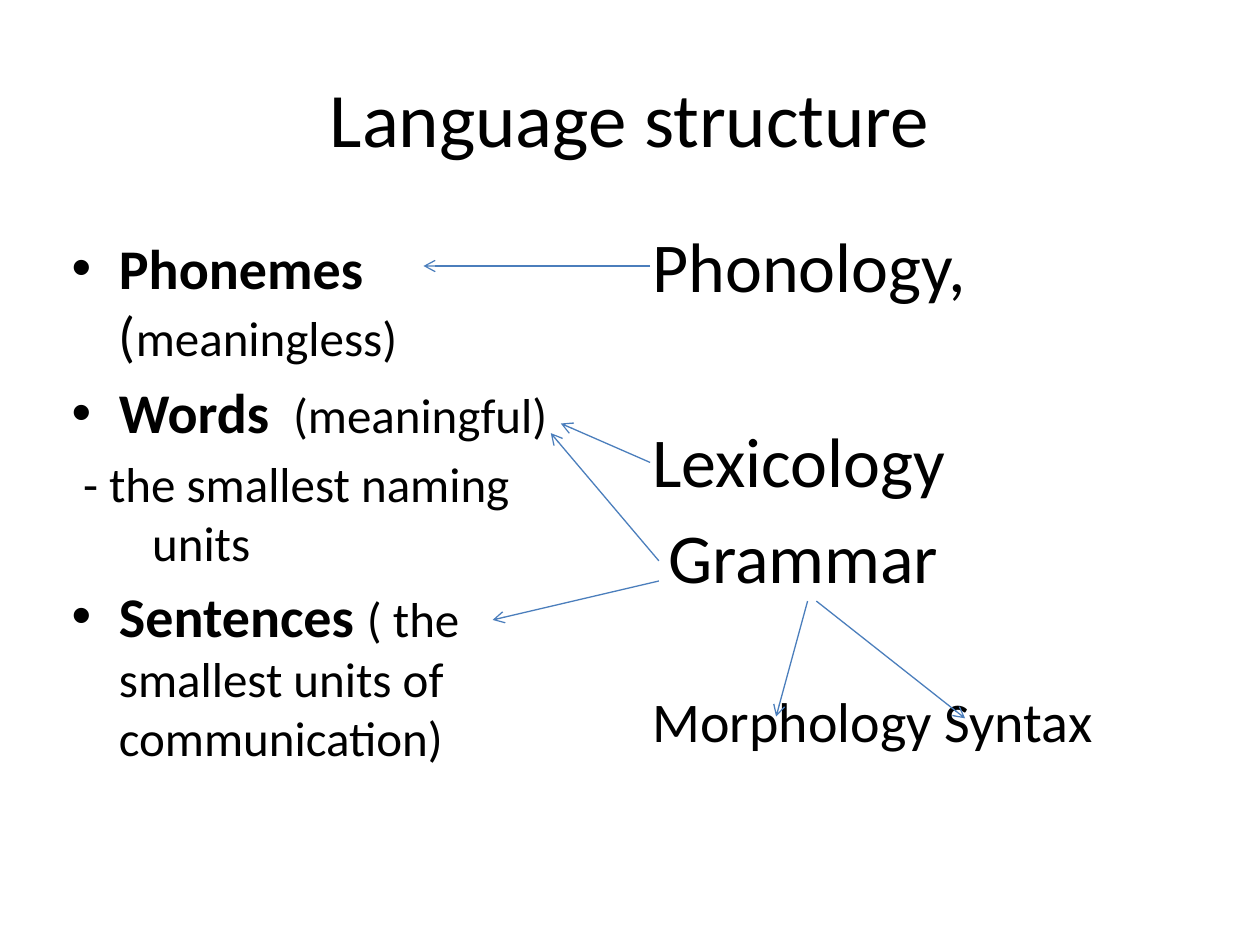
from lxml.etree import SubElement
from pptx import Presentation
from pptx.dml.color import RGBColor
from pptx.enum.shapes import MSO_CONNECTOR as Connector
from pptx.enum.text import MSO_ANCHOR as Anchor, PP_ALIGN as Align
from pptx.oxml.ns import qn
from pptx.util import Pt

FONT, INK, ARROW = "Calibri", "000000", "4B7EBC"
HANG = 27  # hanging indent of the bulleted paragraphs

# Paragraph: runs (text, size, bold), space before, left margin, indent, bullet
TITLE = [dict(runs=[("Language structure", 44, False)], align=Align.CENTER)]
UNITS = [
    dict(runs=[("Phonemes ", 32, True), ("(", 32, False),
               ("meaningless)", 28, False)],
         margin=HANG, indent=-HANG, bullet=True),
    dict(runs=[("Words ", 32, True), (" (meaningful)", 28, False)],
         before=6, margin=HANG, indent=-HANG, bullet=True),
    dict(runs=[("- the smallest naming units", 28, False)],
         before=5, margin=46, indent=-39.5),
    dict(runs=[("Sentences ", 32, True),
               ("( the smallest units of communication)", 28, False)],
         before=5.5, margin=HANG, indent=-HANG, bullet=True),
]
BRANCHES = [
    dict(runs=[("Phonology,", 40, False)]),
    dict(runs=[("Lexicology", 40, False)], before=63),
    dict(runs=[("Grammar", 40, False)], before=7, margin=9),
    dict(runs=[("Morphology Syntax", 32, False)], before=51),
]

# Text areas: left, top, width, height, paragraphs, anchor
AREAS = [
    (36, 21.6, 648, 90, TITLE, Anchor.MIDDLE),
    (33.84, 129.6, 318.24, 356.4, UNITS, Anchor.TOP),
    (365.76, 123.84, 318.24, 356.4, BRANCHES, Anchor.TOP),
]

# Arrows: start point, end point
ARROWS = [
    ((371.5, 152), (242, 152)),        # Phonology to phonemes
    ((371.5, 264.25), (320.5, 242)),   # Lexicology to words
    ((376.5, 320.5), (314.75, 247.5)),  # Grammar to words
    ((376.5, 332), (281.5, 354.25)),   # Grammar to sentences
    ((461.5, 343.5), (443.5, 409.5)),  # Grammar to morphology
    ((466.5, 343.5), (551.5, 410.5)),  # Grammar to syntax
]


def color(value):
    return RGBColor.from_string(value)


def fill_paragraph(paragraph, runs, before=0, margin=0, indent=0,
                   bullet=False, align=Align.LEFT):
    paragraph.alignment = align
    paragraph.space_before = Pt(before)
    props = paragraph._p.get_or_add_pPr()
    props.set("marL", str(Pt(margin)))
    props.set("indent", str(Pt(indent)))
    if bullet:
        SubElement(props, qn("a:buFont"), typeface="Arial")
        SubElement(props, qn("a:buChar"), char="•")
    else:
        SubElement(props, qn("a:buNone"))
    for text, size, bold in runs:
        run = paragraph.add_run()
        run.text = text
        run.font.name = FONT
        run.font.size = Pt(size)
        run.font.bold = bold
        run.font.color.rgb = color(INK)


def add_text(slide, left, top, width, height, paragraphs, anchor):
    frame = slide.shapes.add_textbox(
        Pt(left), Pt(top), Pt(width), Pt(height)).text_frame
    frame.word_wrap = True
    frame.vertical_anchor = anchor
    for i, content in enumerate(paragraphs):
        paragraph = frame.add_paragraph() if i else frame.paragraphs[0]
        fill_paragraph(paragraph, **content)


def add_arrow(slide, start, end):
    arrow = slide.shapes.add_connector(
        Connector.STRAIGHT, *(Pt(v) for v in start + end))
    arrow.line.color.rgb = color(ARROW)
    arrow.line.width = Pt(0.75)
    SubElement(arrow.line._get_or_add_ln(), qn("a:tailEnd"), type="arrow")
    SubElement(arrow._element.spPr, qn("a:effectLst"))


def main():
    deck = Presentation()
    deck.slide_width, deck.slide_height = Pt(720), Pt(540)
    slide = deck.slides.add_slide(deck.slide_layouts[6])
    for area in AREAS:
        add_text(slide, *area)
    for start, end in ARROWS:
        add_arrow(slide, start, end)
    deck.save("out.pptx")


if __name__ == "__main__":
    main()
